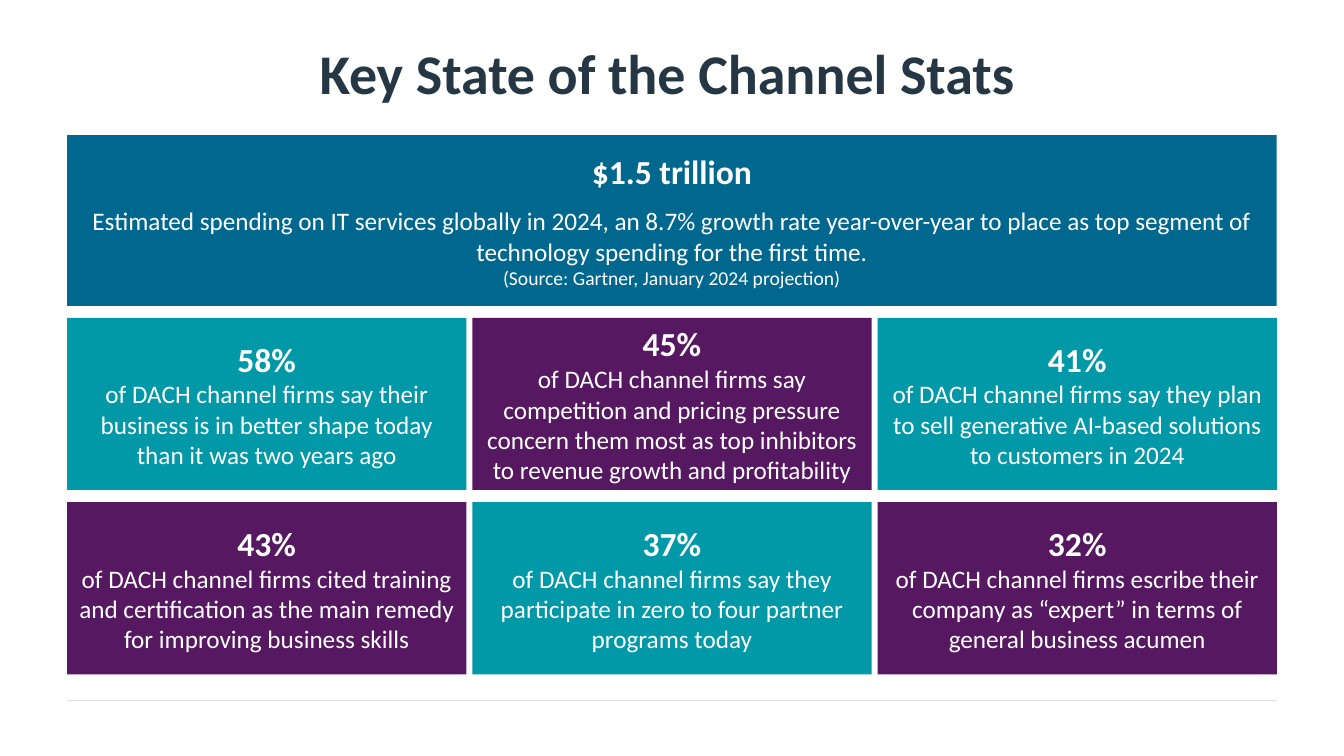
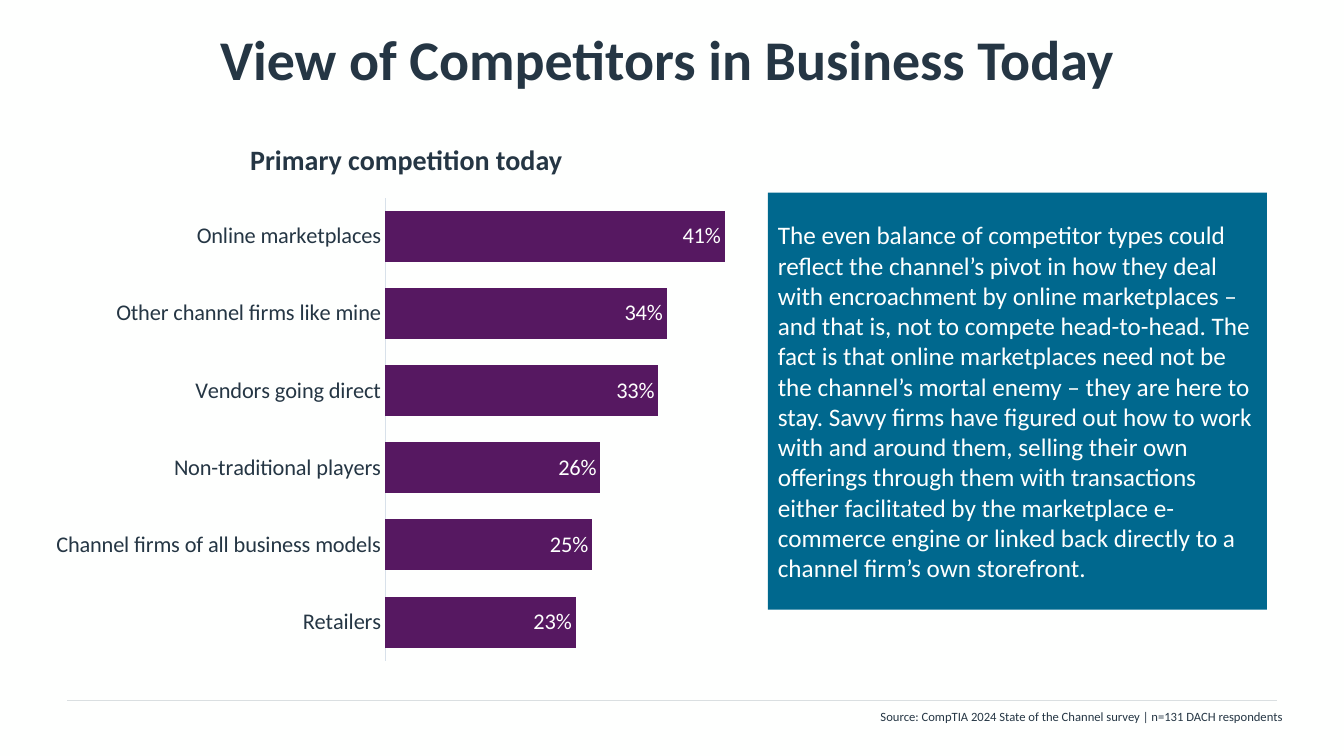
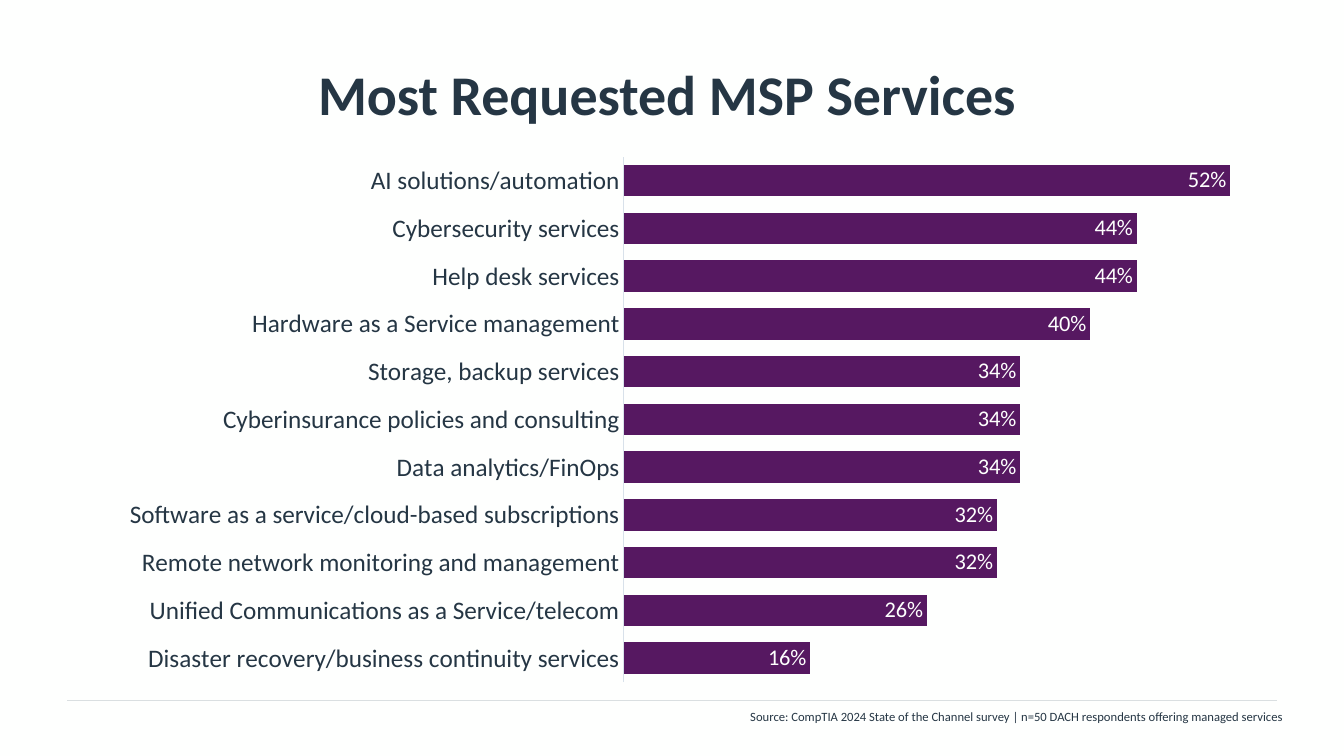
import pptx
import pptx.chart.data
import pptx.dml.color
import pptx.enum.chart
import pptx.enum.shapes
import pptx.enum.text
import pptx.oxml.ns
import pptx.oxml.xmlchemy
import pptx.util

Pt = pptx.util.Pt
ALIGN = pptx.enum.text.PP_ALIGN
MIDDLE = pptx.enum.text.MSO_ANCHOR.MIDDLE

FACE = "Calibri"
PAPER = "FEFFFE"
INK = "253644"
BLUE = "00688E"
TEAL = "0198A7"
PLUM = "561861"
RULE = "DADFE1"
AXIS = "D8E1EA"

LEFT, WIDE = 48, 864


def paint(target, code):
    if hasattr(target, "solid"):
        target.solid()
        target = target.fore_color
    target.rgb = pptx.dml.color.RGBColor.from_string(code)


def style(font, size, code, bold=False):
    font.name = FACE
    font.size = Pt(size)
    font.bold = bold
    paint(font.color, code)


def place(shape, box):
    shape.left, shape.top, shape.width, shape.height = [Pt(n) for n in box]


def write(shape, rows, code, align, after=0):
    frame = shape.text_frame
    frame.word_wrap = True
    frame.text = "\n".join(text for text, size, bold in rows)
    for para, (text, size, bold) in zip(frame.paragraphs, rows):
        para.alignment = align
        for run in para.runs:
            style(run.font, size, code, bold)
    if after:
        frame.paragraphs[0].space_after = Pt(after)


def head(shape, box, text, size):
    place(shape, box)
    write(shape, [(text, size, True)], INK, ALIGN.CENTER)
    frame = shape.text_frame
    frame.auto_size = pptx.enum.text.MSO_AUTO_SIZE.NONE
    frame.vertical_anchor = MIDDLE
    frame.margin_left = 0


def start(deck, title, top):
    slide = deck.slides.add_slide(deck.slide_layouts[5])
    head(slide.shapes.title, (LEFT, top, WIDE, 90), title, 40)
    line = slide.shapes.add_connector(
        pptx.enum.shapes.MSO_CONNECTOR.STRAIGHT,
        Pt(LEFT), Pt(500.4), Pt(LEFT + WIDE), Pt(500.4))
    line.line.width = Pt(0.5)
    paint(line.line.fill, RULE)
    props = line._element.spPr
    props.append(pptx.oxml.xmlchemy.OxmlElement("a:effectLst"))
    return slide


def label(slide, box):
    return slide.shapes.add_textbox(*[Pt(n) for n in box])


def source(slide, text):
    foot = label(slide, (455.75, 502.5, 467.25, 18))
    write(foot, [(text, 9, False)], INK, ALIGN.RIGHT)


def panel(slide, box, code, rows, align=ALIGN.CENTER, after=0):
    shape = slide.shapes.add_shape(
        pptx.enum.shapes.MSO_SHAPE.RECTANGLE, *[Pt(n) for n in box])
    shape.shadow.inherit = False
    paint(shape.fill, code)
    shape.line.fill.background()
    shape.text_frame.vertical_anchor = MIDDLE
    write(shape, rows, PAPER, align, after)


def tiles(slide, box, stats, cols=3, gap=4.4, drop=8.7):
    left, top, width, height = box
    lines = len(stats) // cols
    wide = (width - gap * (cols - 1)) / cols
    tall = (height - drop * (lines - 1)) / lines
    for spot, (share, text) in enumerate(stats):
        row, col = divmod(spot, cols)
        cell = (left + col * (wide + gap), top + row * (tall + drop), wide, tall)
        panel(slide, cell, PLUM if spot % 2 else TEAL,
              [(share, 24, True), (text, 18, False)])


def frame_plot(chart, split, depth):
    area = chart._chartSpace.chart.plotArea
    for old in area.findall(pptx.oxml.ns.qn("c:layout")):
        area.remove(old)
    layout = pptx.oxml.xmlchemy.OxmlElement("c:layout")
    manual = pptx.oxml.xmlchemy.OxmlElement("c:manualLayout")
    layout.append(manual)
    for tag, val in (("layoutTarget", "inner"), ("xMode", "edge"),
                     ("yMode", "edge"), ("x", split), ("y", 0),
                     ("w", round(1 - split, 3)), ("h", depth)):
        part = pptx.oxml.xmlchemy.OxmlElement("c:" + tag)
        part.set("val", str(val))
        manual.append(part)
    area.insert(0, layout)


def bars(slide, box, pairs, size, top, split, depth):
    data = pptx.chart.data.CategoryChartData(number_format="0%")
    data.categories = [name for name, share in reversed(pairs)]
    data.add_series("Series 1", [share / 100 for name, share in reversed(pairs)])
    chart = slide.shapes.add_chart(
        pptx.enum.chart.XL_CHART_TYPE.BAR_CLUSTERED,
        *[Pt(n) for n in box], data).chart
    style(chart.font, 10, INK)
    chart.has_title = False
    chart.has_legend = False
    frame_plot(chart, split, depth)

    names = chart.category_axis
    names.major_tick_mark = pptx.enum.chart.XL_TICK_MARK.NONE
    names.has_major_gridlines = False
    style(names.tick_labels.font, size, INK)
    names.format.line.width = Pt(0.75)
    paint(names.format.line.fill, AXIS)

    scale = chart.value_axis
    scale.visible = False
    scale.has_major_gridlines = False
    scale.minimum_scale = 0
    scale.maximum_scale = top

    plot = chart.plots[0]
    plot.gap_width = 51
    plot.vary_by_categories = False
    paint(plot.series[0].format.fill, PLUM)
    plot.has_data_labels = True
    marks = plot.data_labels
    marks.show_value = True
    marks.number_format = "0%"
    marks.number_format_is_linked = False
    marks.position = pptx.enum.chart.XL_LABEL_POSITION.INSIDE_END
    style(marks.font, 16, PAPER)


def stats(deck):
    slide = start(deck, "Key State of the Channel Stats", 6.5)
    panel(slide, (LEFT, 96.5, WIDE, 122), BLUE, [
        ("$1.5 trillion", 24, True),
        ("Estimated spending on IT services globally in 2024, an 8.7% growth rate "
         "year-over-year to place as top segment of technology spending for the "
         "first time.", 18, False),
        ("(Source: Gartner, January 2024 projection)", 14, False),
    ], after=10)
    firms = "of DACH channel firms "
    tiles(slide, (LEFT, 227, WIDE, 254.7), [
        ("58%", firms + "say their business is in better shape today than it was "
                        "two years ago"),
        ("45%", firms + "say competition and pricing pressure concern them most as "
                        "top inhibitors to revenue growth and profitability"),
        ("41%", firms + "say they plan to sell generative AI-based solutions to "
                        "customers in 2024"),
        ("43%", firms + "cited training and certification as the main remedy for "
                        "improving business skills"),
        ("37%", firms + "say they participate in zero to four partner programs today"),
        ("32%", firms + "escribe their company as “expert” in terms of general "
                        "business acumen"),
    ])


def rivals(deck):
    slide = start(deck, "View of Competitors in Business Today", -3.6)
    source(slide, "Source: CompTIA 2024 State of the Channel survey | "
                  "n=131 DACH respondents")
    bars(slide, (22.3, 141, 519, 348), [
        ("Online marketplaces", 41),
        ("Other channel firms like mine", 34),
        ("Vendors going direct", 33),
        ("Non-traditional players", 26),
        ("Channel firms of all business models", 25),
        ("Retailers", 23),
    ], 16, 0.45, 0.487, 0.951)
    box = (77.75, 69, 432, 90)
    head(label(slide, box), box, "Primary competition today", 20)
    panel(slide, (548.5, 137.5, 356.5, 298), BLUE, [(
        "The even balance of competitor types could reflect the channel’s pivot in "
        "how they deal with encroachment by online marketplaces – and that is, not "
        "to compete head-to-head. The fact is that online marketplaces need not be "
        "the channel’s mortal enemy – they are here to stay. Savvy firms have "
        "figured out how to work with and around them, selling their own offerings "
        "through them with transactions either facilitated by the marketplace "
        "e-commerce engine or linked back directly to a channel firm’s own "
        "storefront.", 18, False)], ALIGN.LEFT, 10)


def wants(deck):
    slide = start(deck, "Most Requested MSP Services", 21.6)
    bars(slide, (LEFT, 111.6, WIDE, 376), [
        ("AI solutions/automation", 52),
        ("Cybersecurity services", 44),
        ("Help desk services", 44),
        ("Hardware as a Service management", 40),
        ("Storage, backup services", 34),
        ("Cyberinsurance policies and consulting", 34),
        ("Data analytics/FinOps", 34),
        ("Software as a service/cloud-based subscriptions", 32),
        ("Remote network monitoring and management", 32),
        ("Unified Communications as a Service/telecom", 26),
        ("Disaster recovery/business continuity services", 16),
    ], 18, 0.56, 0.46, 1)
    source(slide, "Source: CompTIA 2024 State of the Channel survey | "
                  "n=50 DACH respondents offering managed services")


def main():
    deck = pptx.Presentation()
    deck.slide_width, deck.slide_height = Pt(960), Pt(540)
    paint(deck.slide_master.background.fill, PAPER)
    for build in (stats, rivals, wants):
        build(deck)
    deck.save("out.pptx")


if __name__ == "__main__":
    main()
